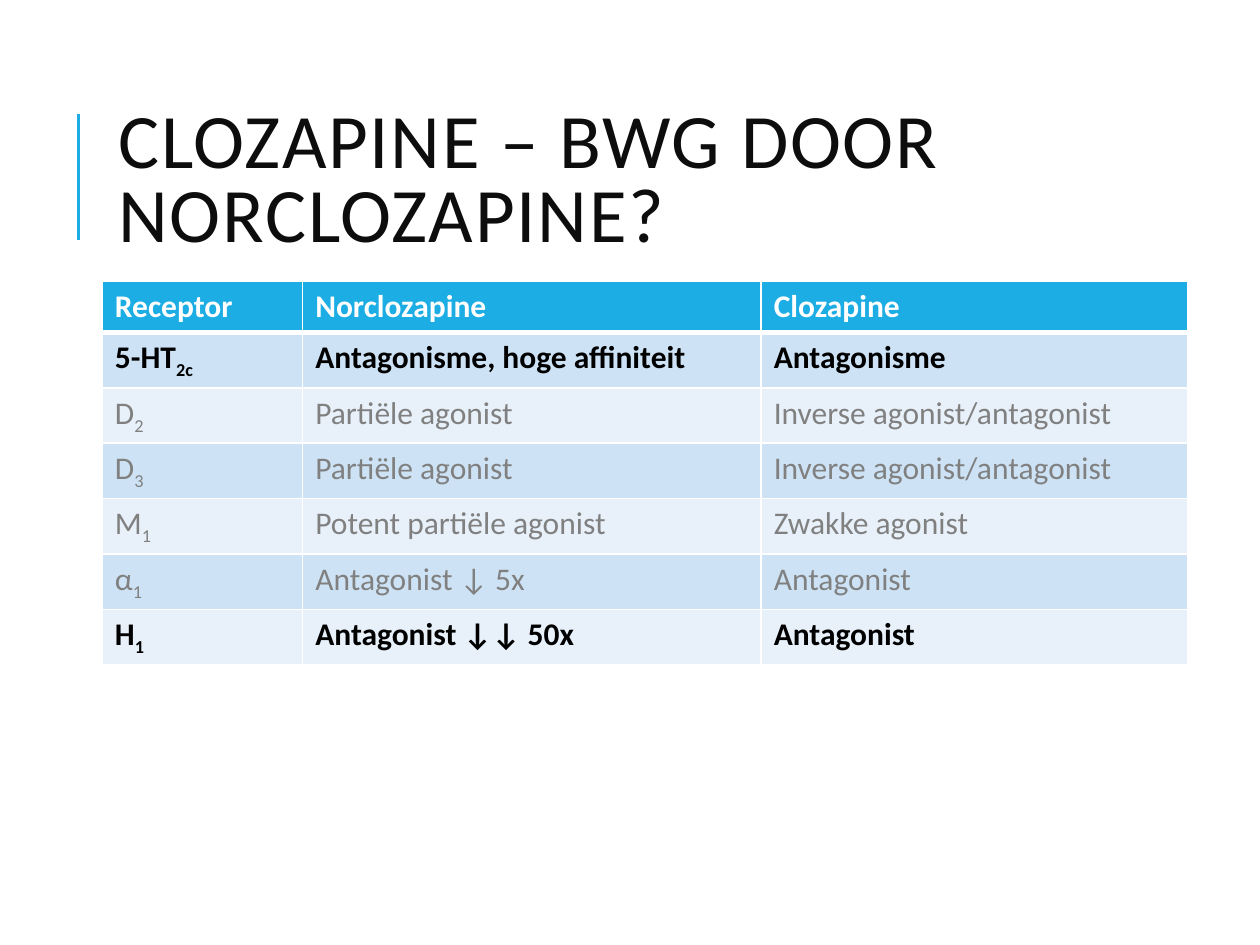
import pptx
import pptx.dml.color
import pptx.enum.shapes
import pptx.enum.text
import pptx.oxml
import pptx.oxml.ns
import pptx.util
from lxml import etree

Pt = pptx.util.Pt
RGB = pptx.dml.color.RGBColor
qn = pptx.oxml.ns.qn

BLUE = RGB(0x1C, 0xAD, 0xE4)
MID = RGB(0xCD, 0xE3, 0xF5)
PALE = RGB(0xE8, 0xF1, 0xFA)
WHITE = RGB(0xFF, 0xFF, 0xFF)
BLACK = RGB(0, 0, 0)
GREY = RGB(0x80, 0x80, 0x80)
INK = RGB(0x0D, 0x0D, 0x0D)
FONT = "Calibri"

HEADS = ["Receptor", "Norclozapine", "Clozapine"]
# Receptor, subscript, norclozapine, clozapine, stressed
ROWS = [
    ("5-HT", "2c", "Antagonisme, hoge affiniteit", "Antagonisme", True),
    ("D", "2", "Partiёle agonist", "Inverse agonist/antagonist", False),
    ("D", "3", "Partiёle agonist", "Inverse agonist/antagonist", False),
    ("M", "1", "Potent partiёle agonist", "Zwakke agonist", False),
    ("α", "1", "Antagonist ↓ 5x", "Antagonist", False),
    ("H", "1", "Antagonist ↓↓ 50x", "Antagonist", True),
]
WIDTHS = [114.5, 262, 244]


def style(run, size, color, bold=False):
    font = run.font
    font.name, font.size, font.bold = FONT, Pt(size), bold
    font.color.rgb = color


def add_title(slide, text, left, top, width, height):
    title = slide.shapes.title
    title.left, title.top = Pt(left), Pt(top)
    title.width, title.height = Pt(width), Pt(height)
    frame = title.text_frame
    frame.text = text
    frame.word_wrap = True
    frame.auto_size = pptx.enum.text.MSO_AUTO_SIZE.NONE
    frame.vertical_anchor = pptx.enum.text.MSO_ANCHOR.MIDDLE
    par = frame.paragraphs[0]
    par.alignment = pptx.enum.text.PP_ALIGN.LEFT
    par.line_spacing = 0.8
    style(par.runs[0], 44, INK)
    par.runs[0].font._element.set("spc", "100")


def add_rule(slide, left, top, height):
    kind = pptx.enum.shapes.MSO_CONNECTOR.STRAIGHT
    rule = slide.shapes.add_connector(
        kind, Pt(left), Pt(top + height), Pt(left), Pt(top))
    rule.line.color.rgb = BLUE
    rule.line.width = Pt(1.5)
    etree.SubElement(rule._element.spPr, qn("a:effectLst"))


def add_edges(cell, **widths):
    """Draw white borders; widths maps a side (L, R, T, B) to points."""
    props = cell._tc.get_or_add_tcPr()
    for side, width in widths.items():
        edge = etree.SubElement(props, qn("a:ln" + side), w=str(Pt(width)))
        fill = etree.SubElement(edge, qn("a:solidFill"))
        etree.SubElement(fill, qn("a:srgbClr"), val=str(WHITE))


def fill_cell(cell, parts, fill, color, bold):
    """Write parts as runs; any part after the first is a subscript."""
    par = cell.text_frame.paragraphs[0]
    for i, part in enumerate(parts):
        run = par.add_run()
        run.text = part
        style(run, 18, color, bold)
        if i:
            run.font._element.set("baseline", "-25000")
    cell.fill.solid()
    cell.fill.fore_color.rgb = fill


def add_grid(slide, left, top, height):
    count = len(ROWS) + 1
    table = slide.shapes.add_table(
        count, len(WIDTHS), Pt(left), Pt(top),
        Pt(sum(WIDTHS)), Pt(height)).table
    for col, width in zip(table.columns, WIDTHS):
        col.width = Pt(width)
    lines = [([[head] for head in HEADS], BLUE, WHITE, True)]
    for i, (name, sub, nor, clo, stress) in enumerate(ROWS):
        lines.append(([[name, sub], [nor], [clo]], PALE if i % 2 else MID,
                      BLACK if stress else GREY, stress))
    for r, (texts, fill, color, bold) in enumerate(lines):
        for c, parts in enumerate(texts):
            cell = table.cell(r, c)
            add_edges(cell, L=1, R=1, T=3 if r == 1 else 1,
                      B=3 if r == 0 else 1)
            fill_cell(cell, parts, fill, color, bold)


def main():
    deck = pptx.Presentation()
    deck.slide_width, deck.slide_height = Pt(720), Pt(540)
    slide = deck.slides.add_slide(deck.slide_layouts[5])
    add_rule(slide, 45, 65, 72)
    add_title(slide, "CLOZAPINE – BWG DOOR NORCLOZAPINE?", 60.5, 46, 574, 118)
    add_grid(slide, 58.5, 160.8, 204.4)
    deck.save("out.pptx")


if __name__ == "__main__":
    main()
